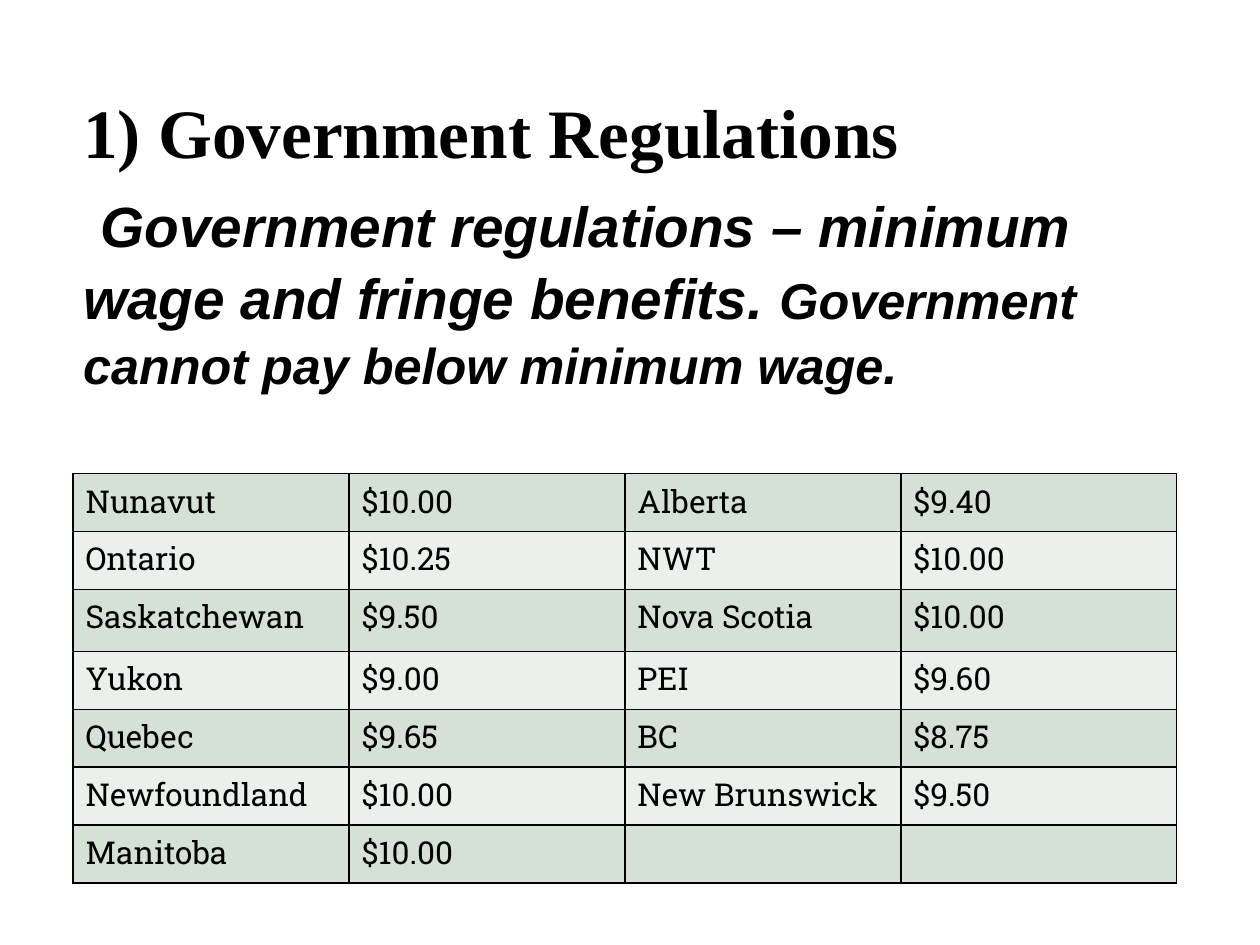
from dataclasses import dataclass

from lxml import etree
from pptx import Presentation
from pptx.dml.color import RGBColor
from pptx.enum.text import MSO_ANCHOR, MSO_AUTO_SIZE, PP_ALIGN
from pptx.oxml.ns import qn
from pptx.util import Inches, Pt

TOP, NO_FIT, LEFT = MSO_ANCHOR.TOP, MSO_AUTO_SIZE.NONE, PP_ALIGN.LEFT
TITLE_ONLY = 5
BLACK = RGBColor(0x00, 0x00, 0x00)
BANDS = (RGBColor(0xD5, 0xE0, 0xD6), RGBColor(0xEB, 0xF0, 0xEC))
TABLE_FONT = "Roboto Slab"


@dataclass
class Run:
    text: str
    size: float
    font: str = "Arial"
    italic: bool = True


@dataclass
class Wage:
    region: str
    rate: str


HEADING = [Run("1) Government Regulations", 39.6, "Times New Roman", False)]
STATEMENT = [
    Run("Government regulations – minimum wage and fringe benefits. ", 32.4),
    Run("Government cannot pay below minimum wage.", 28.8),
]
LEFT_WAGES = [
    Wage("Nunavut", "$10.00"), Wage("Ontario", "$10.25"),
    Wage("Saskatchewan", "$9.50"), Wage("Yukon", "$9.00"),
    Wage("Quebec", "$9.65"), Wage("Newfoundland", "$10.00"),
    Wage("Manitoba", "$10.00"),
]
RIGHT_WAGES = [
    Wage("Alberta", "$9.40"), Wage("NWT", "$10.00"),
    Wage("Nova Scotia", "$10.00"), Wage("PEI", "$9.60"),
    Wage("BC", "$8.75"), Wage("New Brunswick", "$9.50"),
    Wage("", ""),
]
ROW_HEIGHTS = [0.46, 0.46, 0.49, 0.46, 0.46, 0.46, 0.46]
COLUMN_WIDTH = 2.19


def format_font(font, **values) -> None:
    for name, value in values.items():
        setattr(font, name, value)
    font.color.rgb = BLACK


def write_paragraph(p, runs: list[Run], indent: float, before: float) -> None:
    p.alignment, p.line_spacing, p.space_before = LEFT, 1.06, Pt(before)
    pPr = p._p.get_or_add_pPr()
    pPr.set("marL", str(Inches(0.06)))
    pPr.set("indent", str(Inches(indent)))
    for run in runs:
        r = p.add_run()
        r.text = run.text
        format_font(r.font, name=run.font, size=Pt(run.size),
                    bold=True, italic=run.italic)


def add_borders(cell) -> None:
    tcPr = cell._tc.get_or_add_tcPr()
    for position, side in enumerate(("lnL", "lnR", "lnT", "lnB")):
        ln = etree.Element(qn(f"a:{side}"), w=str(Pt(1)))
        fill = etree.SubElement(ln, qn("a:solidFill"))
        etree.SubElement(fill, qn("a:srgbClr"), val=str(BLACK))
        tcPr.insert(position, ln)


def fill_cell(cell, text: str, color: RGBColor) -> None:
    cell.fill.solid()
    cell.fill.fore_color.rgb = color
    add_borders(cell)
    p = cell.text_frame.paragraphs[0]
    if text:
        r = p.add_run()
        r.text = text
        format_font(r.font, name=TABLE_FONT, size=Pt(18), bold=False)


def add_title(s) -> None:
    title = s.shapes.title
    box = dict(left=0.5, top=0.62, width=9, height=2.5)
    for name, value in box.items():
        setattr(title, name, Inches(value))
    tf = title.text_frame
    tf.word_wrap, tf.auto_size, tf.vertical_anchor = True, NO_FIT, TOP
    write_paragraph(tf.paragraphs[0], HEADING, indent=0, before=0)
    write_paragraph(tf.add_paragraph(), STATEMENT, indent=0.14, before=8)


def add_wage_table(s) -> None:
    frame = s.shapes.add_table(len(ROW_HEIGHTS), 4, Inches(0.58), Inches(3.76),
                               Inches(4 * COLUMN_WIDTH), Inches(sum(ROW_HEIGHTS)))
    table = frame.table
    table.first_row = False
    for column in table.columns:
        column.width = Inches(COLUMN_WIDTH)
    for i, (a, b) in enumerate(zip(LEFT_WAGES, RIGHT_WAGES)):
        table.rows[i].height = Inches(ROW_HEIGHTS[i])
        for j, text in enumerate((a.region, a.rate, b.region, b.rate)):
            fill_cell(table.cell(i, j), text, BANDS[i % 2])


def main() -> None:
    prs = Presentation()
    prs.slide_width, prs.slide_height = Inches(10), Inches(7.5)
    s = prs.slides.add_slide(prs.slide_layouts[TITLE_ONLY])
    # Heading and statement
    add_title(s)
    # Minimum wage by region
    add_wage_table(s)
    prs.save("out.pptx")


if __name__ == "__main__":
    main()
